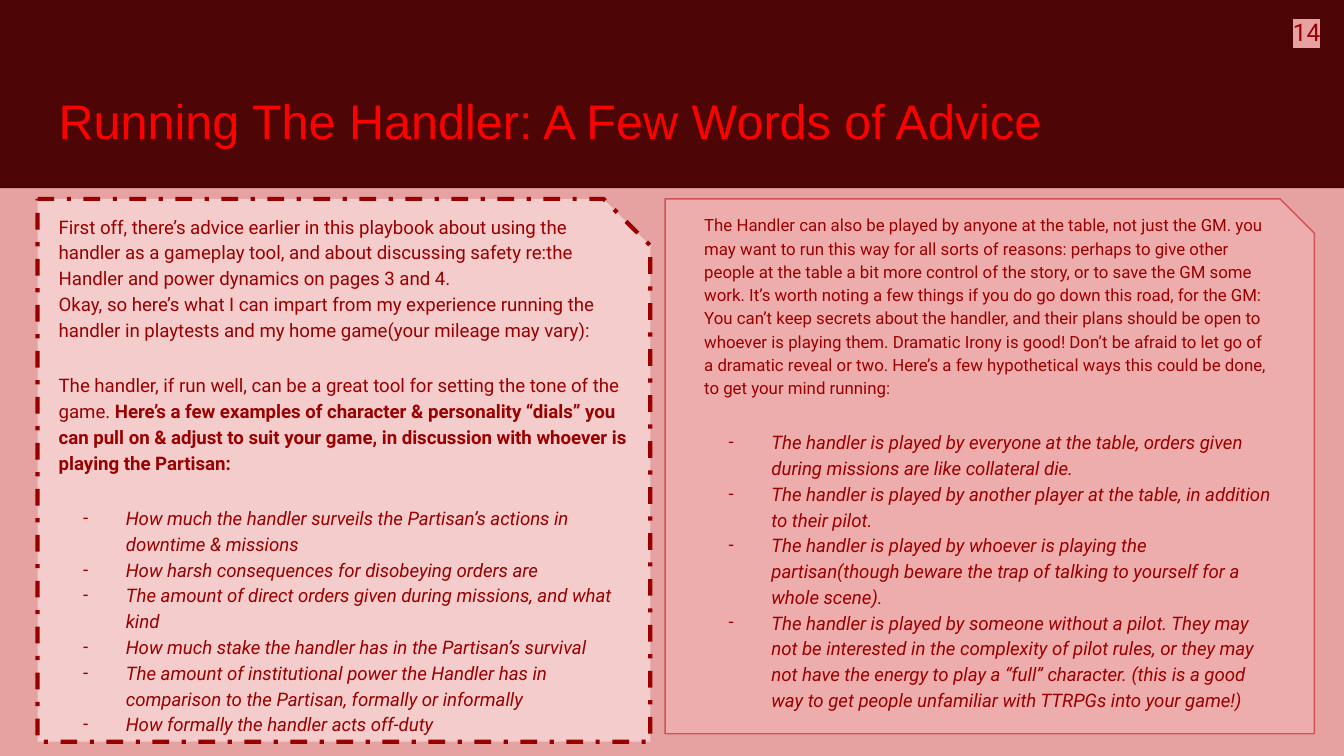
"""Build the slide of advice on running the Handler."""
from dataclasses import dataclass

from lxml.etree import SubElement
from pptx import Presentation
from pptx.dml.color import RGBColor
from pptx.enum.dml import MSO_LINE_DASH_STYLE as Dash
from pptx.enum.shapes import MSO_AUTO_SHAPE_TYPE as Preset
from pptx.enum.text import MSO_ANCHOR as Anchor, PP_ALIGN as Align
from pptx.oxml.ns import qn
from pptx.util import Cm, Pt


@dataclass(frozen=True)
class Theme:
    """Colours, fonts and type sizes of the slide."""

    page: str = "E6A1A1"
    band: str = "4D0505"
    title: str = "FF0000"
    text: str = "990000"
    left_fill: str = "F4CCCC"
    left_line: str = "980000"
    right_fill: str = "EEADAD"
    right_line: str = "D35252"
    title_font: str = "Arial"
    body_font: str = "Roboto"
    title_size: int = 26
    number_size: int = 13
    body_size: int = 10
    small_size: int = 9
    line_spacing: float = 1.15
    gap: int = 16


THEME = Theme()
TEXT_TOP, TEXT_WIDTH, TEXT_HEIGHT = 3.76, 11.28, 10.26

SAFETY = (
    "First off, there’s advice earlier in this playbook about using the handler as a "
    "gameplay tool, and about discussing safety re:the Handler and power dynamics on "
    "pages 3 and 4."
)
EXPERIENCE = (
    "Okay, so here’s what I can impart from my experience running the handler in "
    "playtests and my home game(your mileage may vary):"
)
TONE = "The handler, if run well, can be a great tool for setting the tone of the game. "
DIALS_LEAD = (
    "Here’s a few examples of character & personality “dials” you can pull on & adjust "
    "to suit your game, in discussion with whoever is playing the Partisan:"
)
DIALS = (
    "How much the handler surveils the Partisan’s actions in downtime & missions",
    "How harsh consequences for disobeying orders are",
    "The amount of direct orders given during missions, and what kind",
    "How much stake the handler has in the Partisan’s survival",
    "The amount of institutional power the Handler has in comparison to the Partisan, "
    "formally or informally",
    "How formally the handler acts off-duty",
)
ANYONE = (
    "The Handler can also be played by anyone at the table, not just the GM. you may want "
    "to run this way for all sorts of reasons: perhaps to give other people at the table "
    "a bit more control of the story, or to save the GM some work. It’s worth noting a "
    "few things if you do go down this road, for the GM: You can’t keep secrets about the "
    "handler, and their plans should be open to whoever is playing them. Dramatic Irony "
    "is good! Don’t be afraid to let go of a dramatic reveal or two. Here’s a few "
    "hypothetical ways this could be done, to get your mind running:"
)
WAYS = (
    "The handler is played by everyone at the table, orders given during missions are "
    "like collateral die.",
    "The handler is played by another player at the table, in addition to their pilot.",
    "The handler is played by whoever is playing the partisan(though beware the trap of "
    "talking to yourself for a whole scene).",
    "The handler is played by someone without a pilot. They may not be interested in the "
    "complexity of pilot rules, or they may not have the energy to play a “full” "
    "character. (this is a good way to get people unfamiliar with TTRPGs into your game!)",
)


def add_panel(page, preset, place, fill, line=None, width=0.75, dash=None, snip=None):
    """Add a filled panel, outlined only when a line colour is given."""
    panel = page.shapes.add_shape(preset, *map(Cm, place))
    panel.shadow.inherit = False
    panel.fill.solid()
    panel.fill.fore_color.rgb = RGBColor.from_string(fill)
    if snip is not None:
        panel.adjustments[0] = snip
    if line is None:
        panel.line.fill.background()
        return
    panel.line.color.rgb = RGBColor.from_string(line)
    panel.line.width = Pt(width)
    if dash is not None:
        panel.line.dash_style = dash


def add_box(page, place, anchor=Anchor.TOP):
    """Add a wrapping text box and return its text frame."""
    frame = page.shapes.add_textbox(*map(Cm, place)).text_frame
    frame.word_wrap = True
    frame.vertical_anchor = anchor
    frame.margin_left = frame.margin_right = Cm(0.25)
    frame.margin_top = frame.margin_bottom = Cm(0.25)
    return frame


def style_span(span, size=THEME.body_size, color=THEME.text, font=THEME.body_font,
               bold=False, italic=False):
    """Format one run."""
    span.font.size = Pt(size)
    span.font.color.rgb = RGBColor.from_string(color)
    span.font.name = font
    span.font.bold = bold
    span.font.italic = italic


def highlight(span, color):
    """Put a highlight colour behind a run."""
    properties = span.font._element
    mark = SubElement(properties, qn("a:highlight"))
    SubElement(mark, qn("a:srgbClr"), val=color)
    properties.find(qn("a:solidFill")).addnext(mark)


def space_para(para, before=0):
    """Set the line spacing and the gap above a paragraph."""
    para.line_spacing = THEME.line_spacing
    para.space_before = Pt(before)


def add_bullets(frame, items):
    """Append italic dash bullets, with a gap above the first."""
    for index, item in enumerate(items):
        para = frame.add_paragraph()
        para.text = item
        space_para(para, 0 if index else THEME.gap)
        style_span(para.runs[0], italic=True)
        properties = para._p.get_or_add_pPr()
        properties.set("marL", str(Cm(1.27)))
        properties.set("indent", str(Cm(-0.81)))
        SubElement(SubElement(properties, qn("a:buClr")), qn("a:srgbClr"), val=THEME.text)
        SubElement(properties, qn("a:buFont"), typeface=THEME.body_font)
        SubElement(properties, qn("a:buChar"), char="-")


def add_title(page):
    """Add the slide title."""
    frame = add_box(page, (0.86, 1.4, 23.67, 1.73), Anchor.MIDDLE)
    frame.text = "Running The Handler: A Few Words of Advice"
    style_span(frame.paragraphs[0].runs[0], THEME.title_size, THEME.title, THEME.title_font)


def add_number(page):
    """Add the highlighted page number."""
    frame = add_box(page, (23.32, 0, 1.88, 1.78))
    frame.text = "14"
    para = frame.paragraphs[0]
    para.alignment = Align.RIGHT
    space_para(para)
    style_span(para.runs[0], THEME.number_size)
    highlight(para.runs[0], THEME.page)


def add_dials(page):
    """Add the left column on tone and its dials."""
    frame = add_box(page, (0.86, TEXT_TOP, TEXT_WIDTH, TEXT_HEIGHT))
    frame.text = "\n".join((SAFETY, EXPERIENCE, TONE))
    for para, before in zip(frame.paragraphs, (0, 0, THEME.gap)):
        space_para(para, before)
        style_span(para.runs[0])
    lead = frame.paragraphs[-1].add_run()
    lead.text = DIALS_LEAD
    style_span(lead, bold=True)
    add_bullets(frame, DIALS)


def add_ways(page):
    """Add the right column on who can play the handler."""
    frame = add_box(page, (13.06, TEXT_TOP, TEXT_WIDTH, TEXT_HEIGHT))
    frame.text = ANYONE
    space_para(frame.paragraphs[0])
    style_span(frame.paragraphs[0].runs[0], THEME.small_size)
    add_bullets(frame, WAYS)


def main():
    """Build and save the deck."""
    deck = Presentation()
    deck.slide_width, deck.slide_height = Cm(25.4), Cm(14.29)
    page = deck.slides.add_slide(deck.slide_layouts[6])
    page.background.fill.solid()
    page.background.fill.fore_color.rgb = RGBColor.from_string(THEME.page)
    add_panel(page, Preset.RECTANGLE, (0, 0, 25.4, 3.56), THEME.band)
    add_panel(page, Preset.SNIP_1_RECTANGLE, (12.57, TEXT_TOP, 12.27, 10.11),
              THEME.right_fill, THEME.right_line, snip=0.064)
    add_panel(page, Preset.SNIP_1_RECTANGLE, (0.71, TEXT_TOP, 11.58, TEXT_HEIGHT),
              THEME.left_fill, THEME.left_line, 2.25, Dash.DASH_DOT, 0.086)
    add_title(page)
    add_dials(page)
    add_number(page)
    add_ways(page)
    deck.save("out.pptx")


if __name__ == "__main__":
    main()
